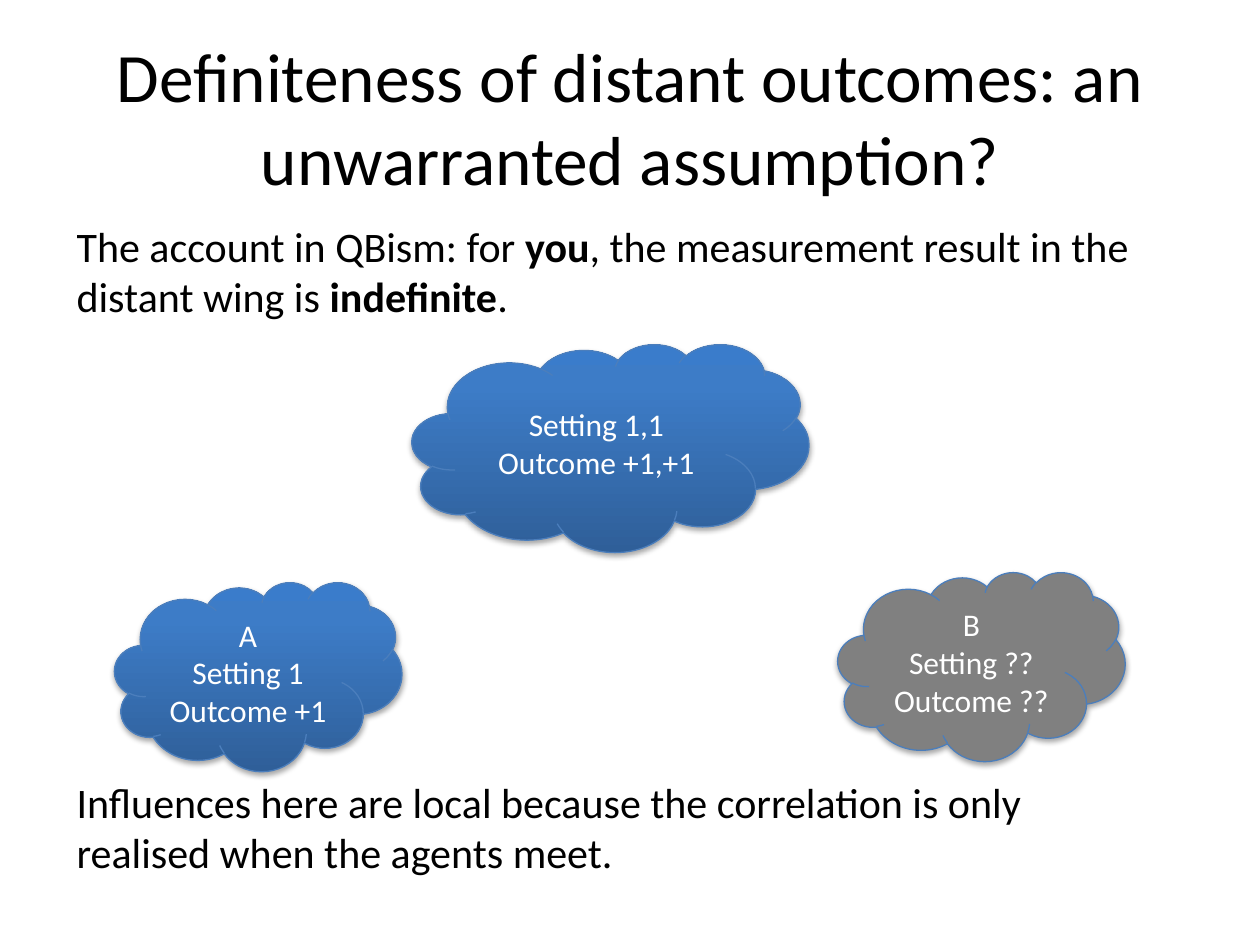
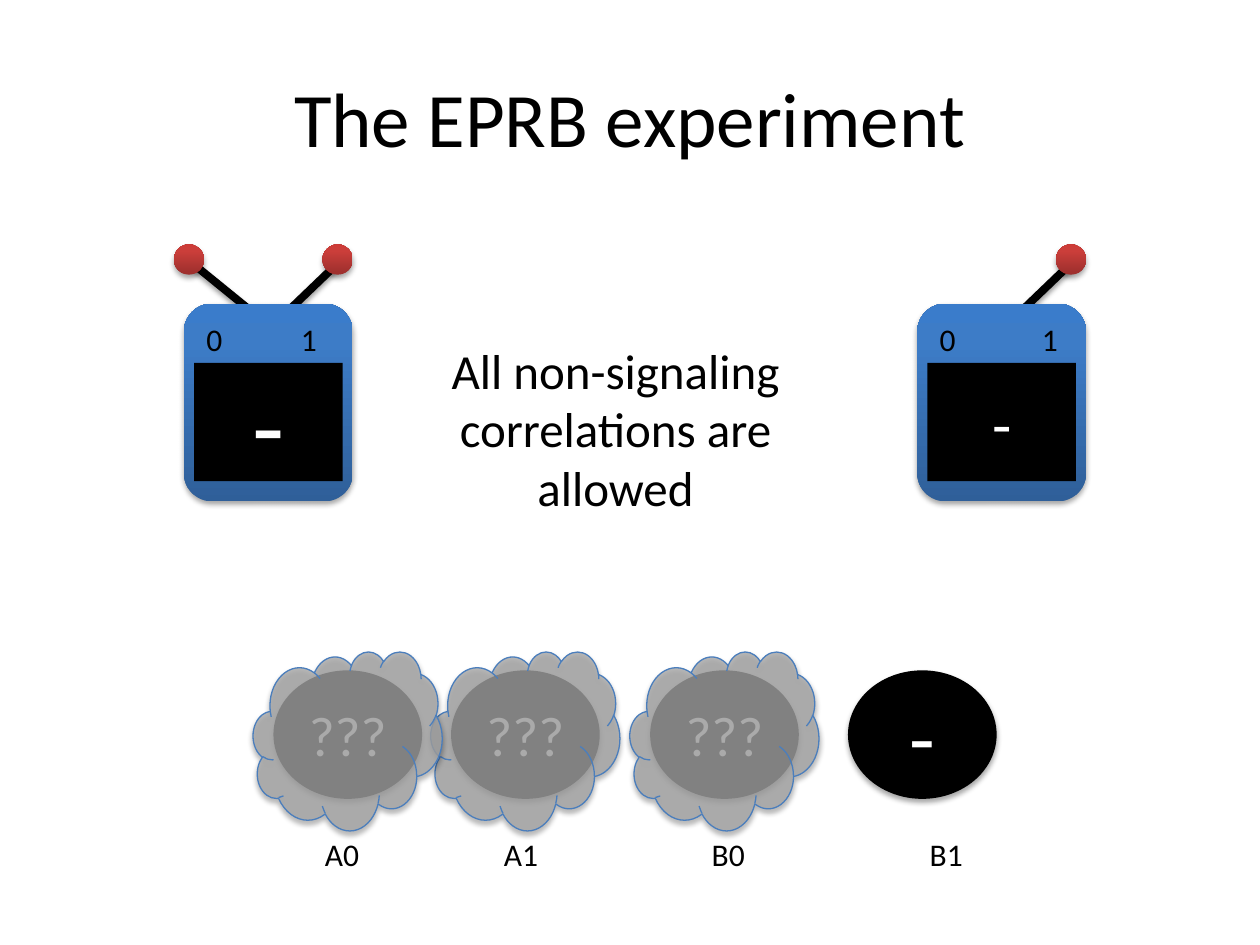
from copy import deepcopy

from lxml import etree
from pptx import Presentation
from pptx import util as u
from pptx.dml.color import RGBColor
from pptx.enum import shapes, text
from pptx.oxml import ns

COLOURS = {
    "black": "000000",
    "white": "FFFFFF",
    "grey": "808080",
    "mist": "A6A6A6",
    "outline": "4B7EBC",
}
GRADIENTS = {
    "blue": ("2F5F99", "3D7CC7", "3A7CCB"),
    "red": ("9C2F2D", "CB3E3A", "CE3B37"),
}
GRADIENT_POSITIONS = (0, 0.8, 1)
FONT = "Calibri"
PRESET = shapes.MSO_SHAPE


def rgb(name):
    return RGBColor.from_string(COLOURS[name])


def write_text(frame, content, size=18, colour="black", align="LEFT", anchor="TOP", wrap=True):
    """Write one paragraph per line; parts between ** marks are bold."""
    frame.word_wrap = wrap
    frame.vertical_anchor = text.MSO_ANCHOR[anchor]
    for index, line in enumerate(content.split("\n")):
        paragraph = frame.paragraphs[0] if index == 0 else frame.add_paragraph()
        paragraph.alignment = text.PP_ALIGN[align]
        for part_index, part in enumerate(line.split("**")):
            run = paragraph.add_run()
            run.text = part
            run.font.name = FONT
            run.font.size = u.Pt(size)
            run.font.bold = part_index % 2 == 1
            run.font.color.rgb = rgb(colour)


def add_shadow(effects, alpha, distance):
    outer = etree.SubElement(
        effects, ns.qn("a:outerShdw"), blurRad=str(u.Pt(3.1)),
        dist=str(u.Pt(distance)), dir="5400000", rotWithShape="0")
    colour = etree.SubElement(outer, ns.qn("a:srgbClr"), val=COLOURS["black"])
    etree.SubElement(colour, ns.qn("a:alpha"), val=str(alpha * 1000))


class Deck:
    def __init__(self):
        self.presentation = Presentation()
        self.presentation.slide_width = u.Inches(10)
        self.presentation.slide_height = u.Inches(7.5)
        self.slide = None

    def start_slide(self, title, size):
        self.slide = self.presentation.slides.add_slide(self.presentation.slide_layouts[6])
        self.label(title, 0.5, 0.3, 9, 1.25, size=size, align="CENTER", anchor="MIDDLE")

    def label(self, content, left, top, width, height, **style):
        box = self.slide.shapes.add_textbox(*map(u.Inches, (left, top, width, height)))
        write_text(box.text_frame, content, **style)

    def shape(self, preset, left, top, width, height, fill, outline=False,
              shadow=True, alpha=None, content=None, size=18):
        shape = self.slide.shapes.add_shape(preset, *map(u.Inches, (left, top, width, height)))
        if fill in GRADIENTS:
            self.fill_gradient(shape, GRADIENTS[fill])
        else:
            shape.fill.solid()
            shape.fill.fore_color.rgb = rgb(fill)
        if alpha:
            colour = shape._element.spPr.find(".//" + ns.qn("a:srgbClr"))
            etree.SubElement(colour, ns.qn("a:alpha"), val=str(alpha * 1000))
        if outline:
            shape.line.color.rgb = rgb("outline")
            shape.line.width = u.Pt(0.75)
        else:
            shape.line.fill.background()
        shape.shadow.inherit = False
        if shadow:
            add_shadow(shape._element.spPr.find(ns.qn("a:effectLst")), 35, 1.8)
        if content:
            write_text(shape.text_frame, content, size=size, colour="white",
                       align="CENTER", anchor="MIDDLE")

    def fill_gradient(self, shape, colours):
        """Fill from the first colour at the bottom to the last at the top."""
        shape.fill.gradient()
        shape.fill.gradient_angle = 90
        stops = shape._element.spPr.find(".//" + ns.qn("a:gsLst"))
        stops.append(deepcopy(stops[1]))
        for stop, colour, position in zip(shape.fill.gradient_stops, colours, GRADIENT_POSITIONS):
            stop.color.rgb = RGBColor.from_string(colour)
            stop.position = position

    def line(self, *ends):
        line = self.slide.shapes.add_connector(
            shapes.MSO_CONNECTOR.STRAIGHT, *map(u.Inches, ends))
        line.line.color.rgb = rgb("black")
        line.line.width = u.Pt(4.5)
        add_shadow(etree.SubElement(line._element.spPr, ns.qn("a:effectLst")), 38, 1.6)

    def cloud(self, left, top, width, height, fill, **style):
        self.shape(PRESET.CLOUD, left, top, width, height, fill, outline=True, **style)

    def detector(self, left, antennas, outcome_size, one_offset):
        """Draw a detector box; each antenna is (foot, tip, bulb) offsets from its left."""
        for foot, tip, _ in antennas:
            self.line(left + foot, 2.58, left + tip, 2.1)
        self.shape(PRESET.ROUNDED_RECTANGLE, left, 2.41, 1.34, 1.57, "blue")
        for _, _, bulb in antennas:
            self.shape(PRESET.OVAL, left + bulb, 1.94, 0.24, 0.24, "red")
        for setting, offset in (("0", 0.08), ("1", one_offset)):
            self.label(setting, left + offset, 2.49, 0.4, 0.4)
        self.shape(PRESET.RECTANGLE, left + 0.08, 2.88, 1.18, 0.94, "black",
                   shadow=False, content="-", size=outcome_size)

    def outcome(self, left, content, size, hidden):
        self.shape(PRESET.OVAL, left, 5.32, 1.18, 1.02, "black", content=content, size=size)
        if hidden:
            self.cloud(left - 0.16, 5.17, 1.5, 1.42, "mist", alpha=78)


def build_distant_outcomes(deck):
    deck.start_slide("Definiteness of distant outcomes: an unwarranted assumption?", 39.6)
    deck.label("The account in QBism: for **you**, the measurement result in the distant "
               "wing is **indefinite**.", 0.51, 1.7, 8.66, 0.91, size=24)
    deck.cloud(0.91, 4.62, 2.28, 1.5, "blue", content="A\nSetting 1\nOutcome +1")
    deck.cloud(6.65, 4.54, 2.28, 1.5, "grey", content="B\nSetting ??\nOutcome ??")
    deck.cloud(3.27, 2.73, 3.15, 1.65, "blue", content="Setting 1,1\nOutcome +1,+1")
    deck.label("Influences here are local because the correlation is only realised when "
               "the agents meet.", 0.51, 6.11, 8.66, 0.91, size=24)


def build_experiment(deck):
    deck.start_slide("The EPRB experiment", 44)
    left_antenna, right_antenna = (0.67, 0.08, -0.08), (0.71, 1.21, 1.1)
    deck.detector(1.46, [right_antenna, left_antenna], outcome_size=60, one_offset=0.83)
    deck.detector(7.28, [right_antenna], outcome_size=36, one_offset=0.89)
    deck.label("All non-signaling correlations are allowed", 3.27, 2.65, 3.23, 1.51,
               size=28, align="CENTER")
    outcomes = [
        ("B1", 7.28, 6.73, "-", 48, False),
        ("B0", 5.55, 5.16, "???", 32, True),
        ("A1", 3.9, 3.58, "???", 32, True),
        ("A0", 2.48, 2.17, "???", 32, True),
    ]
    for name, name_left, left, content, size, hidden in outcomes:
        deck.outcome(left, content, size, hidden)
        deck.label(name, name_left, 6.58, 0.48, 0.4, wrap=False)


def main():
    deck = Deck()
    build_distant_outcomes(deck)
    build_experiment(deck)
    deck.presentation.save("out.pptx")


if __name__ == "__main__":
    main()
